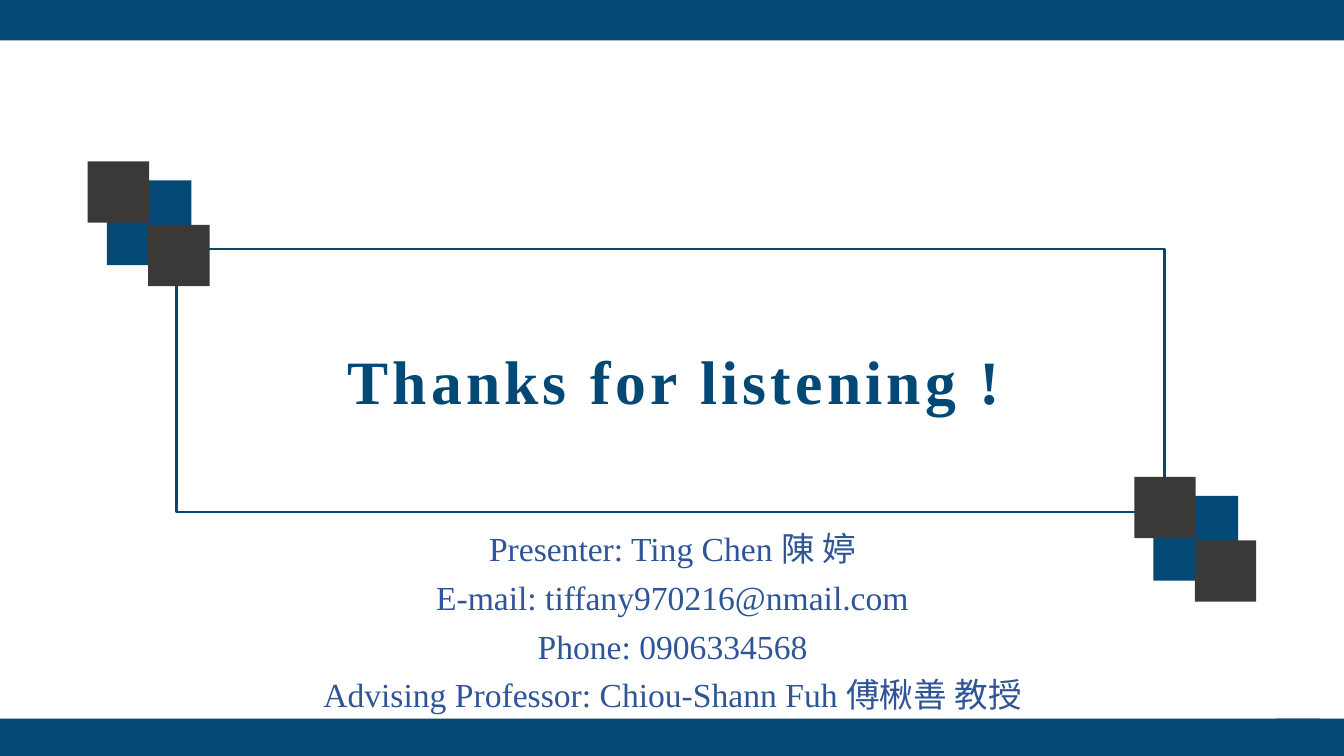
"""Build the closing slide with a framed thank-you line and contact details."""
from dataclasses import dataclass

from pptx import Presentation
from pptx.dml.color import RGBColor
from pptx.enum import shapes, text
from pptx.util import Inches, Pt


@dataclass(frozen=True)
class Theme:
    """Colours, font and type sizes of the slide."""
    navy: RGBColor = RGBColor.from_string("044875")
    charcoal: RGBColor = RGBColor.from_string("3B3838")
    contact_blue: RGBColor = RGBColor.from_string("2F5597")
    font: str = "Times New Roman"
    headline_size: Pt = Pt(44)
    contact_size: Pt = Pt(24)
    contact_gap: Pt = Pt(6)
    frame_width: Pt = Pt(2)


THEME = Theme()
CONTACT_LINES = [
    "Presenter: Ting Chen 陳 婷",
    "E-mail: tiffany970216@nmail.com",
    "Phone: 0906334568",
    "Advising Professor: Chiou-Shann Fuh 傅楸善 教授",
]


def add_rectangle(parent, left, top, width, height):
    """Add a shadowless rectangle, measured in inches."""
    rectangle = parent.add_shape(
        shapes.MSO_SHAPE.RECTANGLE,
        Inches(left), Inches(top), Inches(width), Inches(height))
    rectangle.shadow.inherit = False
    return rectangle


def add_block(parent, left, top, width, height, colour):
    """Add a solid rectangle without an outline."""
    block = add_rectangle(parent, left, top, width, height)
    block.fill.solid()
    block.fill.fore_color.rgb = colour
    block.line.fill.background()


def add_frame(parent, left, top, width, height):
    """Add the hollow frame around the headline."""
    frame = add_rectangle(parent, left, top, width, height)
    frame.fill.background()
    frame.line.color.rgb = THEME.navy
    frame.line.width = THEME.frame_width


def add_corner_ornament(slide, left, top):
    """Group a navy square with two charcoal squares on its diagonal."""
    ornament = slide.shapes.add_group_shape().shapes
    add_block(ornament, left + 0.19, top + 0.19, 0.84, 0.84, THEME.navy)
    for across, down in ((0, 0), (0.6, 0.63)):
        add_block(ornament, left + across, top + down, 0.61, 0.61, THEME.charcoal)


def add_centred_text(slide, left, top, width, height, lines, size, colour,
                     bold=False, tracking=0):
    """Add centred lines; tracking is letter spacing in points."""
    box = slide.shapes.add_textbox(
        Inches(left), Inches(top), Inches(width), Inches(height))
    frame = box.text_frame
    frame.word_wrap = True
    frame.auto_size = text.MSO_AUTO_SIZE.SHAPE_TO_FIT_TEXT
    frame.text = "\n".join(lines)
    for index, paragraph in enumerate(frame.paragraphs):
        paragraph.alignment = text.PP_ALIGN.CENTER
        if index:
            paragraph.space_before = THEME.contact_gap
        for run in paragraph.runs:
            run.font.name = THEME.font
            run.font.size = size
            run.font.bold = bold
            run.font.color.rgb = colour
            if tracking:
                run.font._element.set("spc", str(tracking * 100))


def main():
    """Compose and save the slide."""
    deck = Presentation()
    deck.slide_width, deck.slide_height = Inches(13.33), Inches(7.5)
    slide = deck.slides.add_slide(deck.slide_layouts[6])

    add_centred_text(slide, 1.79, 3.35, 9.8, 0.84, ["Thanks for listening !"],
                     THEME.headline_size, THEME.navy, bold=True, tracking=3)
    add_frame(slide.shapes, 1.75, 2.47, 9.8, 2.61)
    for left, top in ((11.25, 4.73), (0.87, 1.6)):
        add_corner_ornament(slide, left, top)
    for left, top, width, height in (
            (0, -0.01, 13.33, 0.41), (12.65, 7.13, 0.68, 0.37), (0, 7.13, 13.09, 0.37)):
        add_block(slide.shapes, left, top, width, height, THEME.navy)
    add_centred_text(slide, 1.77, 5.19, 9.8, 1.97, CONTACT_LINES,
                     THEME.contact_size, THEME.contact_blue)

    deck.save("out.pptx")


if __name__ == "__main__":
    main()
